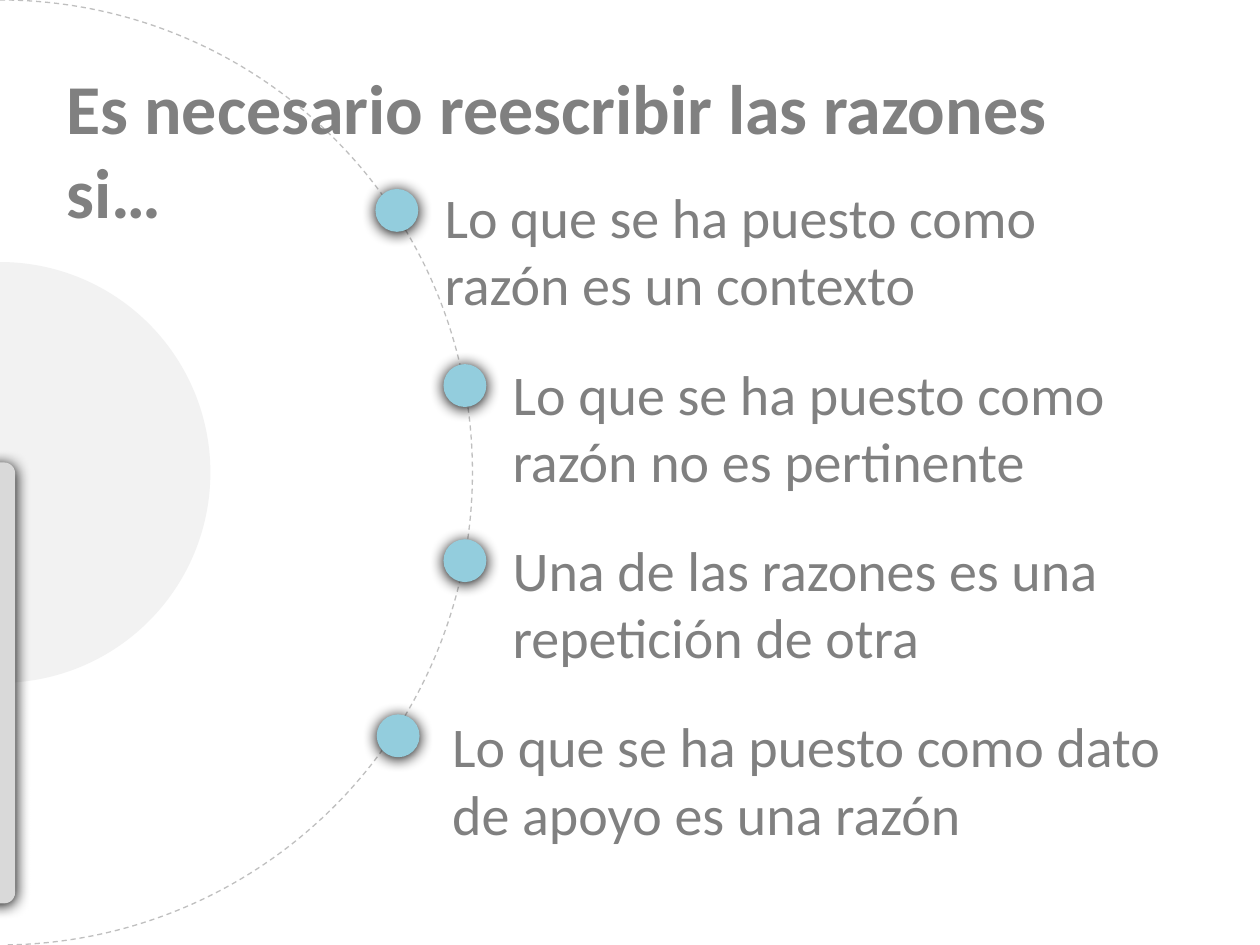
import lxml.etree
import pptx
import pptx.dml.color
import pptx.enum.dml
import pptx.enum.shapes
import pptx.enum.text
import pptx.oxml.ns
import pptx.util

PX = 9144  # EMU; 100 px to the inch
RGB = pptx.dml.color.RGBColor
WHITE = RGB(0xFF, 0xFF, 0xFF)
PALE_GREY = RGB(0xF2, 0xF2, 0xF2)
LIGHT_GREY = RGB(0xD9, 0xD9, 0xD9)
LINE_GREY = RGB(0xBF, 0xBF, 0xBF)
TEXT_GREY = RGB(0x80, 0x80, 0x80)
BLUE = RGB(0x93, 0xCD, 0xDD)
SHAPE = pptx.enum.shapes.MSO_SHAPE

DOT_SIZE = 34
DOT_TOP, DOT_STEP = 150, 139
REASON_TOP, REASON_STEP = 140, 140
REASONS = [  # dot left, text left, text width, text
    (298, 343, 543, "Lo que se ha puesto como razón es un contexto"),
    (352, 397, 497, "Lo que se ha puesto como razón no es pertinente"),
    (352, 397, 489, "Una de las razones es una repetición de otra"),
    (299, 349, 608, "Lo que se ha puesto como dato de apoyo es una razón"),
]


def emu(*lengths):
    return [pptx.util.Emu(length * PX) for length in lengths]


def write_text(frame, text, size, color=TEXT_GREY, bold=False, font="Calibri"):
    frame.word_wrap = True
    frame.auto_size = pptx.enum.text.MSO_AUTO_SIZE.NONE
    frame.vertical_anchor = pptx.enum.text.MSO_ANCHOR.TOP
    para = frame.paragraphs[0]
    para.alignment = pptx.enum.text.PP_ALIGN.LEFT
    span = para.add_run()
    span.text = text
    span.font.name = font
    span.font.size = pptx.util.Pt(size)
    span.font.bold = bold
    span.font.color.rgb = color


def add_shadow(shape):
    """Give the shape a soft black shadow straight below it."""
    effects = shape.element.spPr.find(pptx.oxml.ns.qn("a:effectLst"))
    shadow = lxml.etree.SubElement(
        effects, pptx.oxml.ns.qn("a:outerShdw"),
        blurRad=str(pptx.util.Pt(8.5)), dist=str(pptx.util.Pt(1)),
        dir="5400000", algn="tl", rotWithShape="0")
    lxml.etree.SubElement(shadow, pptx.oxml.ns.qn("a:srgbClr"), val="000000")


class SlideBuilder:
    def __init__(self, page):
        self.page = page

    def title(self, text, left, top, width, height):
        """Fill the title placeholder and bring it to the front."""
        box = self.page.shapes.title
        box.left, box.top, box.width, box.height = emu(left, top, width, height)
        write_text(box.text_frame, text, size=40, bold=True)
        box.element.getparent().append(box.element)

    def text(self, text, left, top, width, height):
        box = self.page.shapes.add_textbox(*emu(left, top, width, height))
        write_text(box.text_frame, text, size=32)

    def shape(self, kind, left, top, width, height, fill, line=None,
              adjustments=(), shadow=False):
        shape = self.page.shapes.add_shape(kind, *emu(left, top, width, height))
        shape.shadow.inherit = False
        shape.fill.solid()
        shape.fill.fore_color.rgb = fill
        for index, value in enumerate(adjustments):
            shape.adjustments[index] = value
        if line is None:
            shape.line.fill.background()
        else:
            shape.line.color.rgb = line
            shape.line.width = pptx.util.Pt(0.75)
            shape.line.dash_style = pptx.enum.dml.MSO_LINE.DASH
        if shadow:
            add_shadow(shape)
        return shape

    def half_disc(self, radius, center_y, fill, line=None):
        """Draw the right half of a circle centred on the left slide edge."""
        self.shape(SHAPE.ARC, -radius, center_y - radius, 2 * radius, 2 * radius,
                   fill, line, adjustments=(162, 53.7))

    def dot(self, left, top):
        self.shape(SHAPE.OVAL, left, top, DOT_SIZE, DOT_SIZE, BLUE, shadow=True)


def main():
    deck = pptx.Presentation()
    deck.slide_width, deck.slide_height = emu(1000, 750)
    page = deck.slides.add_slide(deck.slide_layouts.get_by_name("Title Only"))
    builder = SlideBuilder(page)

    builder.half_disc(375, 375, WHITE, line=LINE_GREY)
    for row, (_, left, width, text) in enumerate(REASONS):
        builder.text(text, left, REASON_TOP + row * REASON_STEP, width, 118)
    for row, (left, *_) in enumerate(REASONS):
        builder.dot(left, DOT_TOP + row * DOT_STEP)
    builder.half_disc(167, 375, PALE_GREY)
    bar = builder.shape(SHAPE.ROUNDED_RECTANGLE, -13, 367, 25, 350, LIGHT_GREY,
                        adjustments=(0.35,), shadow=True)
    bar.rotation = 180
    builder.title("Es necesario reescribir las razones si…", 43, 46, 885, 77)
    deck.save("out.pptx")


if __name__ == "__main__":
    main()
